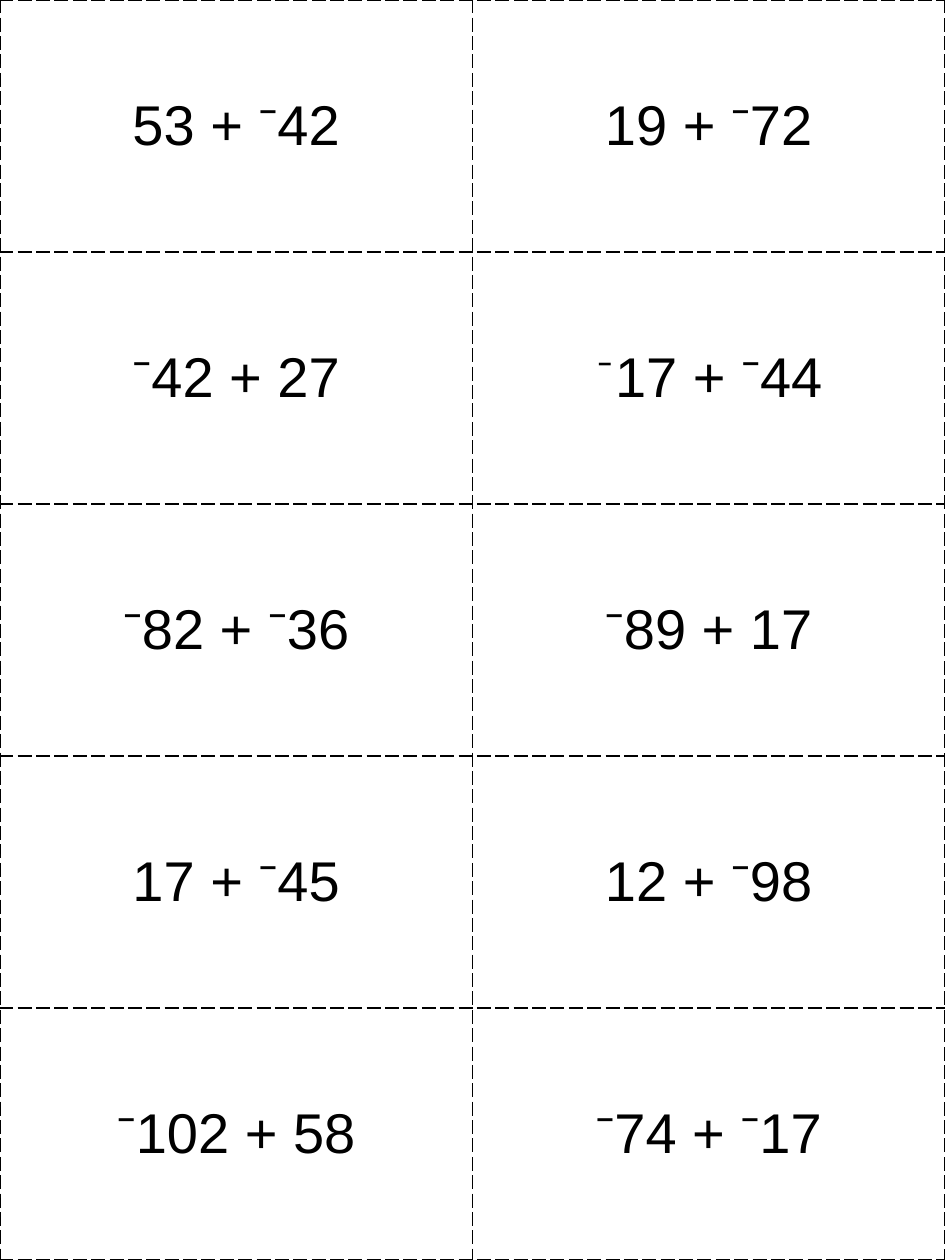
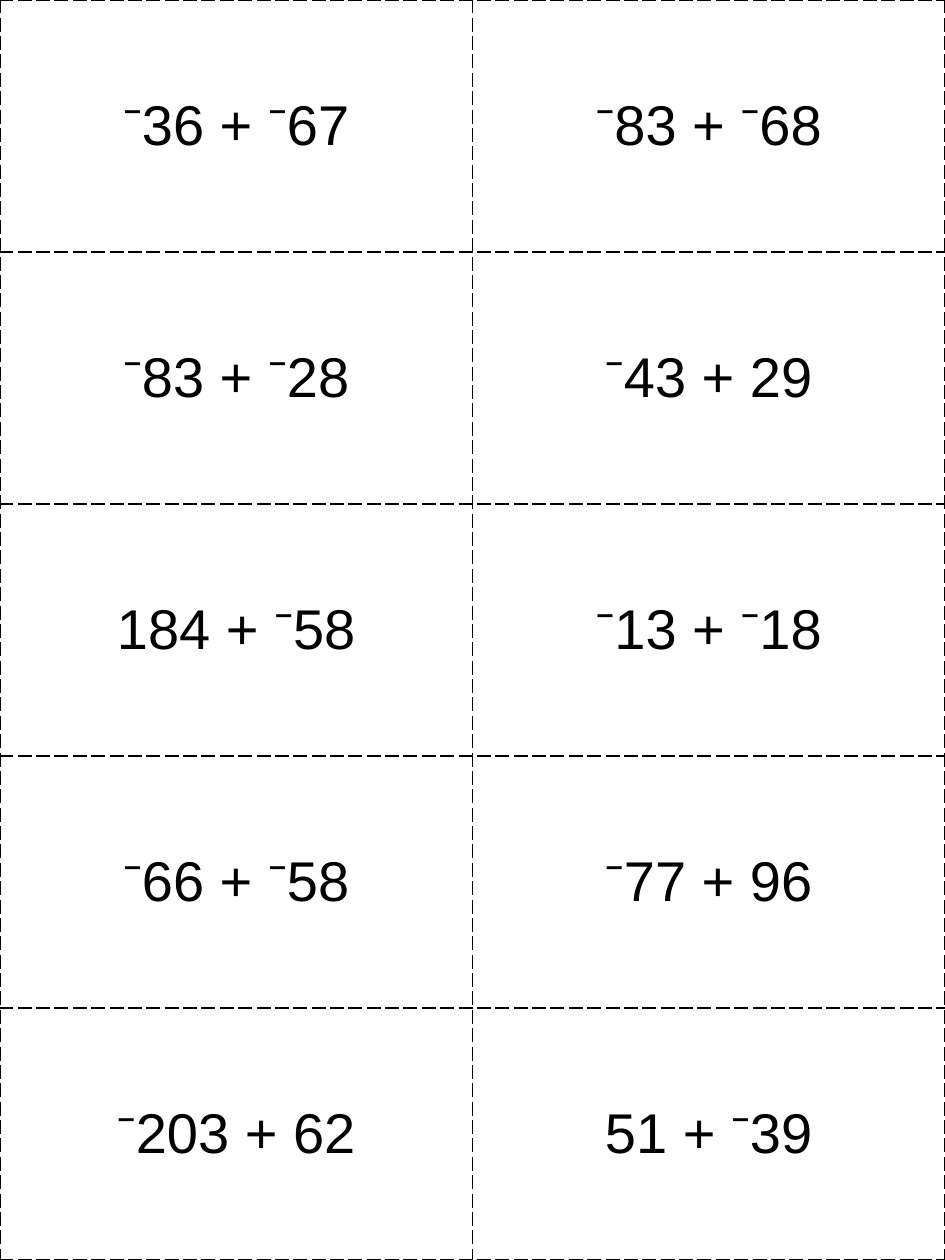
from lxml.etree import SubElement
from pptx import Presentation
from pptx.dml.color import RGBColor
from pptx.enum.text import MSO_ANCHOR, PP_ALIGN
from pptx.oxml.ns import qn
from pptx.util import Pt

CARD_PAGES = [
    [
        ("53 + ⁻42", "19 + ⁻72"),
        ("⁻42 + 27", "⁻17 + ⁻44"),
        ("⁻82 + ⁻36", "⁻89 + 17"),
        ("17 + ⁻45", "12 + ⁻98"),
        ("⁻102 + 58", "⁻74 + ⁻17"),
    ],
    [
        ("⁻36 + ⁻67", "⁻83 + ⁻68"),
        ("⁻83 + ⁻28", "⁻43 + 29"),
        ("184 + ⁻58", "⁻13 + ⁻18"),
        ("⁻66 + ⁻58", "⁻77 + 96"),
        ("⁻203 + 62", "51 + ⁻39"),
    ],
]
CALIBRI_SIGN_CARDS = {"⁻17 + ⁻44"}
PAGE_WIDTH, PAGE_HEIGHT = 540, 720
INK = "000000"
FONT, SIGN_FONT, FONT_SIZE = "Arial", "Calibri", 32
BORDER_WIDTH, BORDER_DASH = 1, "lgDash"
TITLE_LAYOUT_BLANK = 6


def color(hex_value):
    """Return the colour for a hex string."""
    return RGBColor.from_string(hex_value)


def add_borders(cell):
    """Draw a dashed cutting line on all four sides of a cell."""
    properties = cell._tc.get_or_add_tcPr()
    for side in ("a:lnL", "a:lnR", "a:lnT", "a:lnB"):
        line = SubElement(properties, qn(side), w=str(Pt(BORDER_WIDTH)))
        fill = SubElement(line, qn("a:solidFill"))
        SubElement(fill, qn("a:srgbClr"), val=INK)
        SubElement(line, qn("a:prstDash"), val=BORDER_DASH)


def write_card(cell, problem):
    """Write one centred addition problem in a cell."""
    add_borders(cell)
    cell.fill.background()
    cell.vertical_anchor = MSO_ANCHOR.MIDDLE
    para = cell.text_frame.paragraphs[0]
    para.alignment = PP_ALIGN.CENTER
    para.font.name = FONT
    para.font.size = Pt(FONT_SIZE)
    para.font.color.rgb = color(INK)
    if problem in CALIBRI_SIGN_CARDS:
        sign = para.add_run()
        sign.text, problem = problem[0], problem[1:]
        sign.font.name = SIGN_FONT
    para.add_run().text = problem


def add_card_page(deck, rows):
    """Add a page filled by a grid of cards."""
    page = deck.slides.add_slide(deck.slide_layouts[TITLE_LAYOUT_BLANK])
    table = page.shapes.add_table(
        len(rows), len(rows[0]), 0, 0, Pt(PAGE_WIDTH), Pt(PAGE_HEIGHT)
    ).table
    table.first_row = False
    table.horz_banding = False
    for row_index, problems in enumerate(rows):
        for column_index, problem in enumerate(problems):
            write_card(table.cell(row_index, column_index), problem)


def main():
    """Build the deck of cards."""
    deck = Presentation()
    deck.slide_width, deck.slide_height = Pt(PAGE_WIDTH), Pt(PAGE_HEIGHT)
    for rows in CARD_PAGES:
        add_card_page(deck, rows)
    deck.save("out.pptx")


if __name__ == "__main__":
    main()
